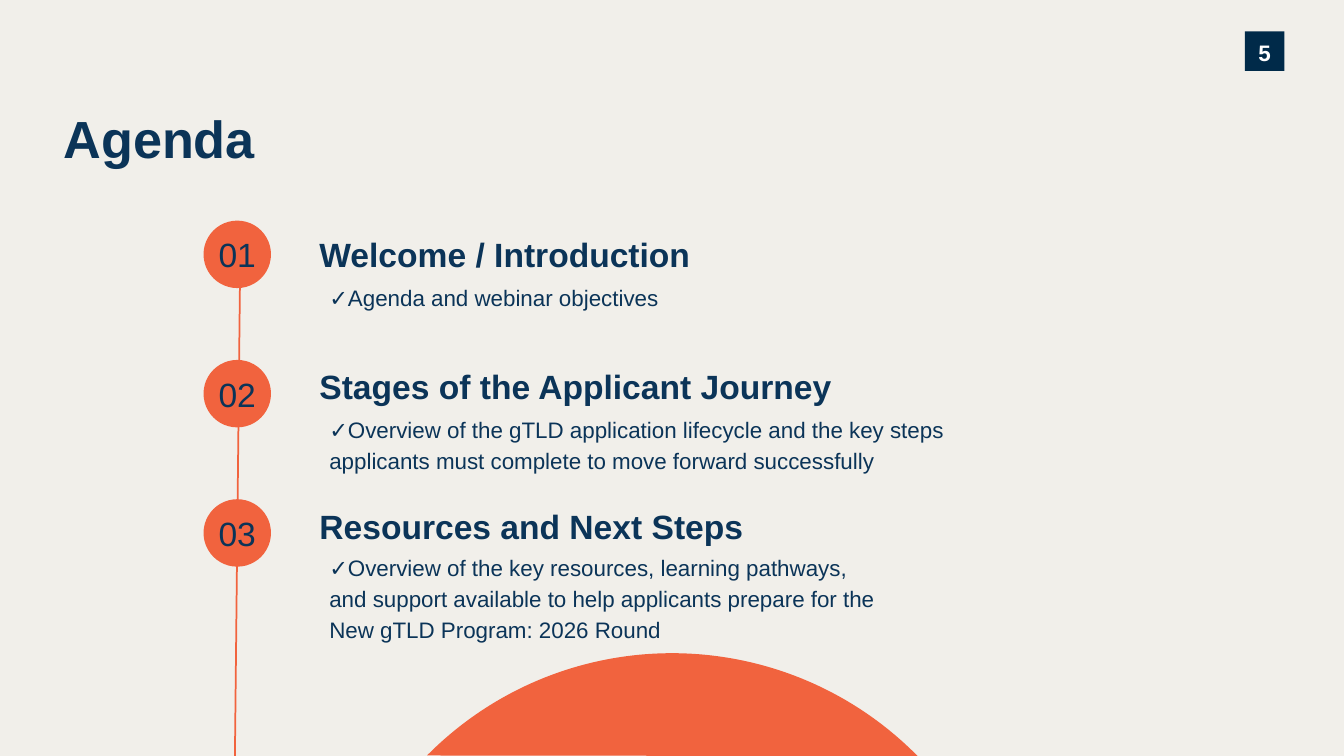
from lxml import etree
from pptx import Presentation
from pptx.dml.color import RGBColor
from pptx.enum.shapes import MSO_CONNECTOR, MSO_SHAPE
from pptx.enum.text import MSO_ANCHOR, PP_ALIGN
from pptx.oxml.ns import qn
from pptx.util import Cm, Pt

OVAL, RECT, CHORD = MSO_SHAPE.OVAL, MSO_SHAPE.RECTANGLE, MSO_SHAPE.CHORD
STRAIGHT = MSO_CONNECTOR.STRAIGHT
TOP, MIDDLE = MSO_ANCHOR.TOP, MSO_ANCHOR.MIDDLE
LEFT, CENTER = PP_ALIGN.LEFT, PP_ALIGN.CENTER

FONT = "Arial"
COLORS = {
    "paper": "F1EFEA",
    "coral": "F1633E",
    "navy": "0B3458",
    "badge": "002A49",
    "white": "FFFFFF",
}
ITEMS = [
    ("Welcome / Introduction", "✓Agenda and webinar objectives", 5.89, 0.92, 14.5, 1),
    ("Stages of the Applicant Journey",
     "✓Overview of the gTLD application lifecycle and the key steps "
     "applicants must complete to move forward successfully", 9.22, 0.91, 16.54, 2),
    ("Resources and Next Steps",
     "✓Overview of the key resources, learning pathways, and support available "
     "to help applicants prepare for the New gTLD Program: 2026 Round",
     12.75, 0.86, 14.5, 3),
]


def color(name):
    return RGBColor.from_string(COLORS[name])


def write(shape, text, size, ink="navy", bold=False, align=LEFT,
          anchor=TOP, inset=0, space=None):
    frame = shape.text_frame
    frame.text = text
    frame.word_wrap = True
    frame.vertical_anchor = anchor
    frame.margin_left = frame.margin_right = Cm(inset)
    frame.margin_top = frame.margin_bottom = Cm(inset)
    para = frame.paragraphs[0]
    para.alignment = align
    if space:
        para.line_spacing = space
    font = para.runs[0].font
    font.name, font.size, font.bold = FONT, Pt(size), bold
    font.color.rgb = color(ink)


def add_box(shapes, text, left, top, width, height, size, **style):
    box = shapes.add_textbox(Cm(left), Cm(top), Cm(width), Cm(height))
    write(box, text, size, **style)


def add_form(shapes, kind, left, top, side, fill):
    form = shapes.add_shape(kind, Cm(left), Cm(top), Cm(side), Cm(side))
    form.shadow.inherit = False
    form.fill.solid()
    form.fill.fore_color.rgb = color(fill)
    form.line.fill.background()
    return form


def add_line(shapes, left, top, right, bottom):
    line = shapes.add_connector(STRAIGHT, Cm(left), Cm(top), Cm(right), Cm(bottom))
    line.line.color.rgb = color("coral")
    line.line.width = Pt(1.25)
    props = line._element.find(qn("p:spPr"))
    etree.SubElement(props, qn("a:effectLst"))


def add_dome(shapes):
    dome = add_form(shapes, CHORD, 8.25, 16.46, 17.37, "coral")
    dome.adjustments[0] = 53.75
    dome.adjustments[1] = 108.21
    dome.rotation = 135.1


def add_item(shapes, title, detail, top, drop, width, lines):
    group = shapes.add_group_shape().shapes
    add_box(group, title, 8.05, top, 14.5, 1.02, 24, bold=True)
    add_box(group, detail, 8.05, top + drop, width, 0.4 + 0.79 * lines, 16,
            inset=0.25, space=1.15)


def main():
    deck = Presentation()
    deck.slide_width, deck.slide_height = Cm(33.87), Cm(19.05)
    slide = deck.slides.add_slide(deck.slide_layouts[6])
    slide.background.fill.solid()
    slide.background.fill.fore_color.rgb = color("paper")
    shapes = slide.shapes

    add_dome(shapes)
    badge = add_form(shapes, RECT, 31.37, 0.79, 1, "badge")
    write(badge, "5", 16, ink="white", bold=True, align=CENTER,
          anchor=MIDDLE, space=1.14)
    add_box(shapes, "Agenda", 1.6, 2.69, 12.47, 2.21, 37.3, bold=True)

    add_line(shapes, 6.05, 6.86, 5.92, 19.05)
    for index, item in enumerate(ITEMS):
        disc = add_form(shapes, OVAL, 5.13, 5.56 + 3.51 * index, 1.7, "coral")
        write(disc, f"{index + 1:02}", 24, align=CENTER, anchor=MIDDLE)
        add_item(shapes, *item)

    deck.save("out.pptx")


if __name__ == "__main__":
    main()
